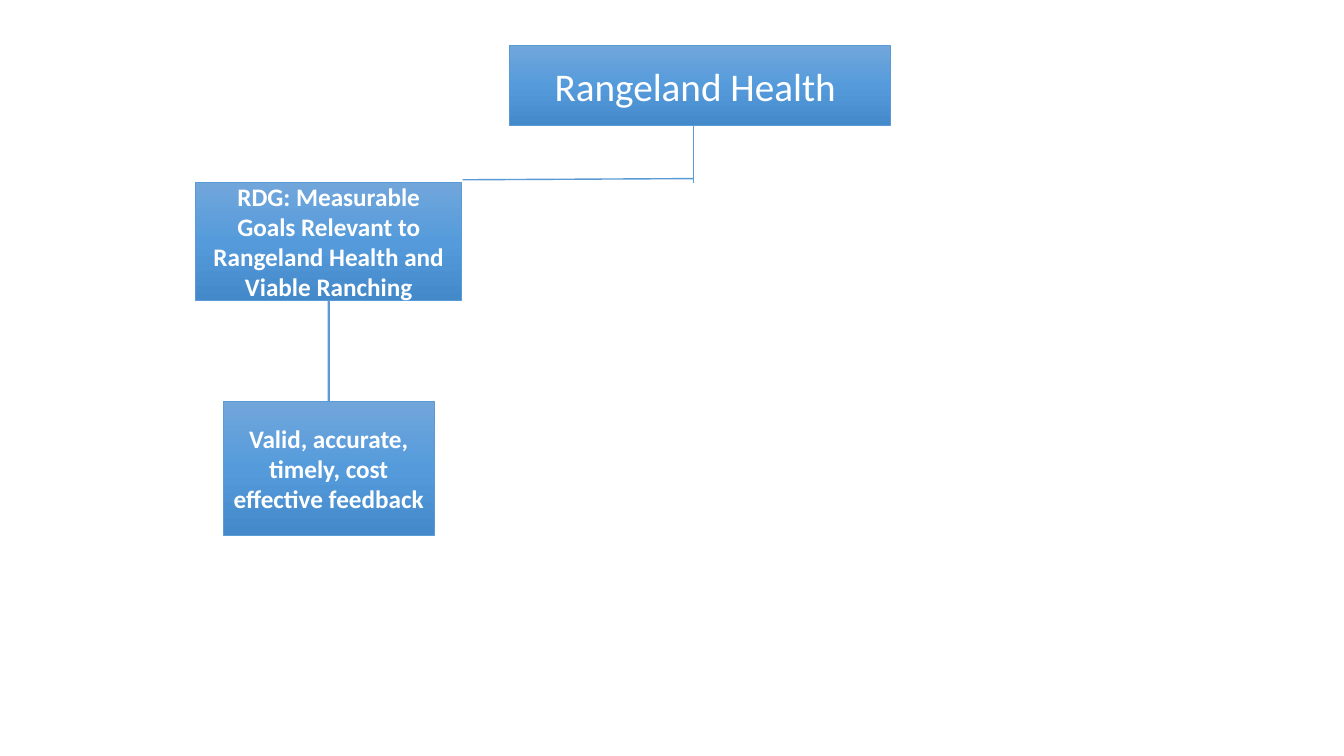
from copy import deepcopy

from lxml import etree
from pptx import Presentation
from pptx.dml.color import RGBColor
from pptx.enum.shapes import MSO_CONNECTOR, MSO_SHAPE
from pptx.enum.text import MSO_ANCHOR, PP_ALIGN
from pptx.oxml.ns import qn
from pptx.util import Cm, Pt

RECTANGLE = MSO_SHAPE.RECTANGLE
STRAIGHT = MSO_CONNECTOR.STRAIGHT
MIDDLE = MSO_ANCHOR.MIDDLE
CENTER = PP_ALIGN.CENTER

WHITE = RGBColor(0xFF, 0xFF, 0xFF)
LINE_BLUE = RGBColor(0x5B, 0x9B, 0xD5)
LIGHT_BLUE = RGBColor(0x71, 0xA6, 0xDB)
MID_BLUE = RGBColor(0x55, 0x9B, 0xDB)
DARK_BLUE = RGBColor(0x44, 0x8A, 0xCA)
GRADIENT = [(0, LIGHT_BLUE), (0.5, MID_BLUE), (1, DARK_BLUE)]

FONT = "Calibri"
BOTTOM_SIDE, TOP_SIDE = 2, 0


def fill_gradient(box):
    """Fill the box from light at the top to dark at the bottom."""
    box.fill.gradient()
    box.fill.gradient_angle = 270
    # A new gradient has two stops; the third is added in XML.
    stop_list = box._element.spPr.find(qn("a:gradFill")).find(qn("a:gsLst"))
    stop_list.append(deepcopy(stop_list[0]))
    for stop, (position, color) in zip(box.fill.gradient_stops, GRADIENT):
        stop.position = position
        stop.color.rgb = color


def add_box(page, left, top, width, height, text, size, bold):
    box = page.shapes.add_shape(RECTANGLE, Cm(left), Cm(top), Cm(width), Cm(height))
    box.shadow.inherit = False
    fill_gradient(box)
    box.line.color.rgb = LINE_BLUE
    box.line.width = Pt(0.5)
    frame = box.text_frame
    frame.word_wrap = True
    frame.vertical_anchor = MIDDLE
    para = frame.paragraphs[0]
    para.alignment = CENTER
    span = para.add_run()
    span.text = text
    span.font.name = FONT
    span.font.size = Pt(size)
    span.font.bold = bold
    span.font.color.rgb = WHITE
    return box


def add_line(page, start, end, width):
    line = page.shapes.add_connector(STRAIGHT, *map(Cm, start + end))
    line.line.color.rgb = LINE_BLUE
    line.line.width = Pt(width)
    etree.SubElement(line._element.spPr, qn("a:effectLst"))
    return line


def main():
    deck = Presentation()
    deck.slide_width, deck.slide_height = Cm(33.87), Cm(19.05)
    page = deck.slides.add_slide(deck.slide_layouts[6])

    add_box(page, 12.83, 1.14, 9.6, 2.03, "Rangeland Health ", 28, False)
    feedback = add_box(page, 5.63, 10.11, 5.31, 3.38,
                       "Valid, accurate, timely, cost effective feedback", 18, True)
    goals = add_box(page, 4.93, 4.6, 6.71, 2.97,
                    "RDG: Measurable Goals Relevant to Rangeland Health "
                    "and Viable Ranching", 18, True)

    add_line(page, (17.48, 3.17), (17.48, 4.6), 1)
    add_line(page, (17.48, 4.5), (11.66, 4.53), 1)
    goals_to_feedback = add_line(page, (8.28, 7.57), (8.28, 10.11), 1.5)
    goals_to_feedback.begin_connect(goals, BOTTOM_SIDE)
    goals_to_feedback.end_connect(feedback, TOP_SIDE)

    deck.save("out.pptx")


if __name__ == "__main__":
    main()
